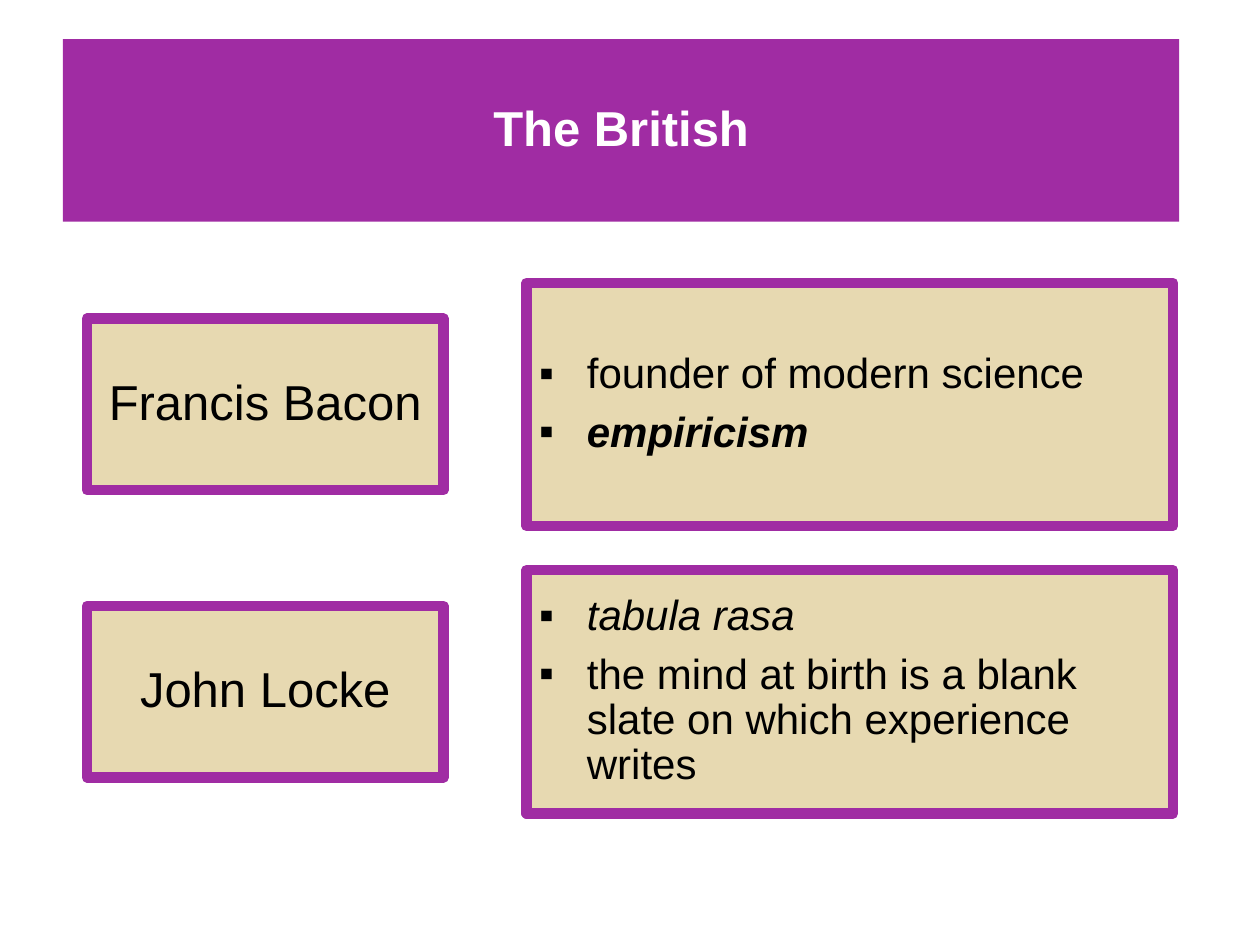
"""Build a slide on two British philosophers and their ideas."""
from lxml import etree
from pptx import Presentation
from pptx.dml.color import RGBColor
from pptx.enum import shapes, text
from pptx.oxml.ns import qn
from pptx.util import Inches, Pt

HEADING = "The British"
PHILOSOPHERS = [
    ("Francis Bacon", [("founder of modern science", ""), ("empiricism", "bi")]),
    ("John Locke", [
        ("tabula rasa", "i"),
        ("the mind at birth is a blank slate on which experience writes", ""),
    ]),
]
THEME = {
    "font": "Arial",
    "purple": RGBColor(0xA0, 0x2C, 0xA3),
    "sand": RGBColor(0xE7, 0xD9, 0xB1),
    "white": RGBColor(0xFF, 0xFF, 0xFF),
    "black": RGBColor(0, 0, 0),
    "large": Pt(28),
    "body": Pt(24),
    "border": Pt(6),
}
BANNER = (0.5, 0.31, 8.86, 1.45)
NAME_LEFT, NAME_WIDTH, NAME_HEIGHT = 0.69, 2.83, 1.36
IDEA_LEFT, IDEA_WIDTH, IDEA_HEIGHT = 4.18, 5.13, 1.93
FIRST_MIDDLE, ROW_STEP = 3.21, 2.28
INDENT = Inches(0.38)


def add_box(slide, place, fill, border=None):
    """Add a rectangle with an optional round-cornered border."""
    box = slide.shapes.add_shape(
        shapes.MSO_SHAPE.RECTANGLE, *(Inches(length) for length in place))
    box.shadow.inherit = False
    box.fill.solid()
    box.fill.fore_color.rgb = fill
    if border is None:
        box.line.fill.background()
    else:
        box.line.color.rgb = border
        box.line.width = THEME["border"]
        etree.SubElement(box.line._get_or_add_ln(), qn("a:round"))
    box.text_frame.word_wrap = True
    box.text_frame.vertical_anchor = text.MSO_ANCHOR.MIDDLE
    return box


def write(box, lines, size, color, before=7.5, bullet=None):
    """Write (wording, style) lines, centred or as a bulleted list."""
    frame = box.text_frame
    for index, (wording, style) in enumerate(lines):
        paragraph = frame.add_paragraph() if index else frame.paragraphs[0]
        paragraph.line_spacing = 0.9
        paragraph.space_before = Pt(before)
        paragraph.alignment = text.PP_ALIGN.LEFT if bullet else text.PP_ALIGN.CENTER
        if bullet:
            properties = paragraph._p.get_or_add_pPr()
            properties.set("marL", str(INDENT))
            properties.set("indent", str(-INDENT))
            etree.SubElement(properties, qn("a:buFont"), typeface=THEME["font"])
            etree.SubElement(properties, qn("a:buChar"), char=bullet)
        run = paragraph.add_run()
        run.text = wording
        run.font.name = THEME["font"]
        run.font.size = size
        run.font.color.rgb = color
        run.font.bold = "b" in style
        run.font.italic = "i" in style


def main():
    """Lay out the banner and one row per philosopher."""
    deck = Presentation()
    deck.slide_width, deck.slide_height = Inches(10), Inches(7.5)
    slide = deck.slides.add_slide(deck.slide_layouts[6])

    banner = add_box(slide, BANNER, THEME["purple"])
    write(banner, [(HEADING, "b")], THEME["large"], THEME["white"], before=0)

    for row, (philosopher, ideas) in enumerate(PHILOSOPHERS):
        middle = FIRST_MIDDLE + row * ROW_STEP
        name_place = (NAME_LEFT, middle - NAME_HEIGHT / 2, NAME_WIDTH, NAME_HEIGHT)
        idea_place = (IDEA_LEFT, middle - IDEA_HEIGHT / 2, IDEA_WIDTH, IDEA_HEIGHT)
        name_box = add_box(slide, name_place, THEME["sand"], THEME["purple"])
        write(name_box, [(philosopher, "")], THEME["large"], THEME["black"])
        idea_box = add_box(slide, idea_place, THEME["sand"], THEME["purple"])
        write(idea_box, ideas, THEME["body"], THEME["black"], bullet="▪")

    deck.save("out.pptx")


if __name__ == "__main__":
    main()
